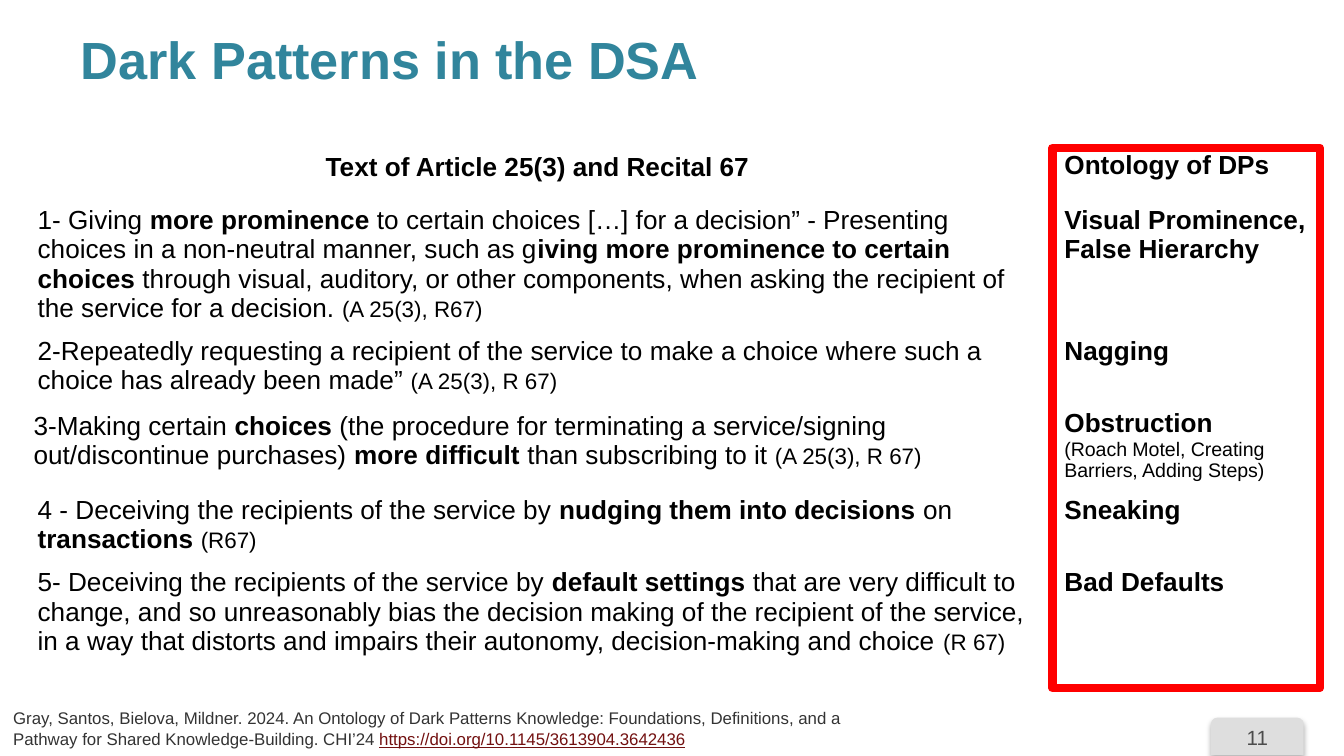
"""Build the slide that maps dark patterns in the DSA to an ontology."""
from lxml import etree
from pptx import Presentation, util as u
from pptx.dml.color import RGBColor
from pptx.enum import shapes, text
from pptx.oxml.ns import qn

WIDTH = 10
HEIGHT = WIDTH * 9 / 16
TITLE = "Dark Patterns in the DSA"
HEADERS = ("**Text of Article 25(3) and Recital 67**", "**Ontology of DPs**")
ROWS = [
    ("1- Giving **more prominence** to certain choices […] for a decision” - "
     "Presenting choices in a non-neutral manner, such as g**iving more prominence "
     "to certain choices **through visual, auditory, or other components, when asking "
     "the recipient of the service for a decision. ",
     "(A 25(3), R67)", "**Visual Prominence, False Hierarchy**", ""),
    ("2-Repeatedly requesting a recipient of the service to make a choice where "
     "such a choice has already been made” ",
     "(A 25(3), R 67)", "**Nagging**", ""),
    ("3-Making certain **choices** (the procedure for terminating a service/signing "
     "out/discontinue purchases) **more difficult **than subscribing to it ",
     "(A 25(3), R 67)", "**Obstruction**",
     "(Roach Motel, Creating Barriers, Adding Steps)"),
    ("4 - Deceiving the recipients of the service by **nudging them into decisions "
     "**on **transactions **",
     "(R67)", "**Sneaking**", ""),
    ("5- Deceiving the recipients of the service by **default settings **that are "
     "very difficult to change, and so unreasonably bias the decision making of the "
     "recipient of the service, in a way that distorts and impairs their autonomy, "
     "decision-making and choice ",
     "(R 67)", "**Bad Defaults**", ""),
]
CITATION = ("Gray, Santos, Bielova, Mildner. 2024. An Ontology of Dark Patterns "
            "Knowledge: Foundations, Definitions, and a Pathway for Shared "
            "Knowledge-Building. CHI’24 ")
DOI = "https://doi.org/10.1145/3613904.3642436"
COLUMN_WIDTHS = (7.64, 2.01)
ROW_HEIGHTS = (0.41, 0.97, 0.54, 0.64, 0.54, 0.96)
TABLE_LEFT, TABLE_TOP = 0.18, 1.07
WIDE_MARGIN_CELLS = {(0, 0), (3, 0)}
BODY_SIZE, CITE_SIZE, DETAIL_SIZE = 14, 12, 10.5


def color(value):
    return RGBColor.from_string(value)


def inches(*values):
    return [u.Inches(value) for value in values]


def add_span(para, words, ink="000000", **formats):
    span = para.add_run()
    span.text = words
    span.font.color.rgb = color(ink)
    for name, value in {"name": "Arial", "size": u.Pt(BODY_SIZE), **formats}.items():
        setattr(span.font, name, value)


def add_marked(para, marked):
    for index, words in enumerate(marked.split("**")):
        if words:
            add_span(para, words, bold=index % 2 == 1)


def add_title(page):
    title = page.shapes.title
    title.left, title.top, title.width, title.height = inches(0.5, 0.15, 6.91, 0.65)
    title.text_frame.vertical_anchor = text.MSO_ANCHOR.TOP
    para = title.text_frame.paragraphs[0]
    para.alignment = text.PP_ALIGN.LEFT
    add_span(para, TITLE, "31859C", size=u.Pt(28), bold=True)


def add_pattern_table(page):
    area = inches(TABLE_LEFT, TABLE_TOP, sum(COLUMN_WIDTHS), sum(ROW_HEIGHTS))
    table = page.shapes.add_table(len(ROW_HEIGHTS), len(COLUMN_WIDTHS), *area).table
    table.first_row = table.horz_banding = False
    for column, width in zip(table.columns, COLUMN_WIDTHS):
        column.width = u.Inches(width)
    for row, height in zip(table.rows, ROW_HEIGHTS):
        row.height = u.Inches(height)
    for index, (clause, source, pattern, detail) in enumerate(
            [(HEADERS[0], "", HEADERS[1], ""), *ROWS]):
        cells = table.rows[index].cells
        for column, (cell, marked) in enumerate(zip(cells, (clause, pattern))):
            cell.fill.background()
            if (index, column) in WIDE_MARGIN_CELLS:
                for side in ("left", "top", "right", "bottom"):
                    setattr(cell, f"margin_{side}", u.Inches(0.07))
            add_marked(cell.text_frame.paragraphs[0], marked)
        if source:
            add_span(cells[0].text_frame.paragraphs[0], source, size=u.Pt(CITE_SIZE))
        if detail:
            add_span(cells[1].text_frame.add_paragraph(), detail, size=u.Pt(DETAIL_SIZE))
    table.cell(0, 0).text_frame.paragraphs[0].alignment = text.PP_ALIGN.CENTER


def add_citation(page):
    box = page.shapes.add_textbox(*inches(0, 5.22, 6.46, 0.52))
    box.text_frame.word_wrap = True
    para = box.text_frame.paragraphs[0]
    add_span(para, CITATION, "333333", size=u.Pt(9))
    add_span(para, DOI, "721010", size=u.Pt(9), underline=True)


def add_ontology_frame(page):
    frame = page.shapes.add_shape(shapes.MSO_SHAPE.RECTANGLE,
                                  *inches(7.83, 1.1, 1.99, 4.02))
    frame.shadow.inherit = False
    frame.fill.background()
    frame.line.color.rgb = color("FF0000")
    frame.line.width = u.Pt(4.5)


def add_page_number(page):
    badge = page.shapes.add_shape(shapes.MSO_SHAPE.ROUND_2_SAME_RECTANGLE,
                                  *inches(9.01, 5.34, 0.69, 0.28))
    badge.shadow.inherit = False
    badge.fill.solid()
    badge.fill.fore_color.rgb = color("DEDEDE")
    badge.line.fill.background()
    effects = badge.element.spPr.find(qn("a:effectLst"))
    shadow = etree.SubElement(effects, qn("a:outerShdw"), blurRad=str(u.Pt(3.1)),
                              dist=str(u.Pt(1.8)), dir="5400000", rotWithShape="0")
    tint = etree.SubElement(shadow, qn("a:srgbClr"), val="000000")
    etree.SubElement(tint, qn("a:alpha"), val="35000")
    badge.text_frame.vertical_anchor = text.MSO_ANCHOR.MIDDLE
    para = badge.text_frame.paragraphs[0]
    para.alignment = text.PP_ALIGN.CENTER
    add_span(para, "11", "4C4C4C", size=u.Pt(11))


def main():
    deck = Presentation()
    deck.slide_width, deck.slide_height = inches(WIDTH, HEIGHT)
    page = deck.slides.add_slide(deck.slide_layouts[5])
    for add_part in (add_page_number, add_title, add_pattern_table,
                     add_citation, add_ontology_frame):
        add_part(page)
    deck.save("out.pptx")


if __name__ == "__main__":
    main()
